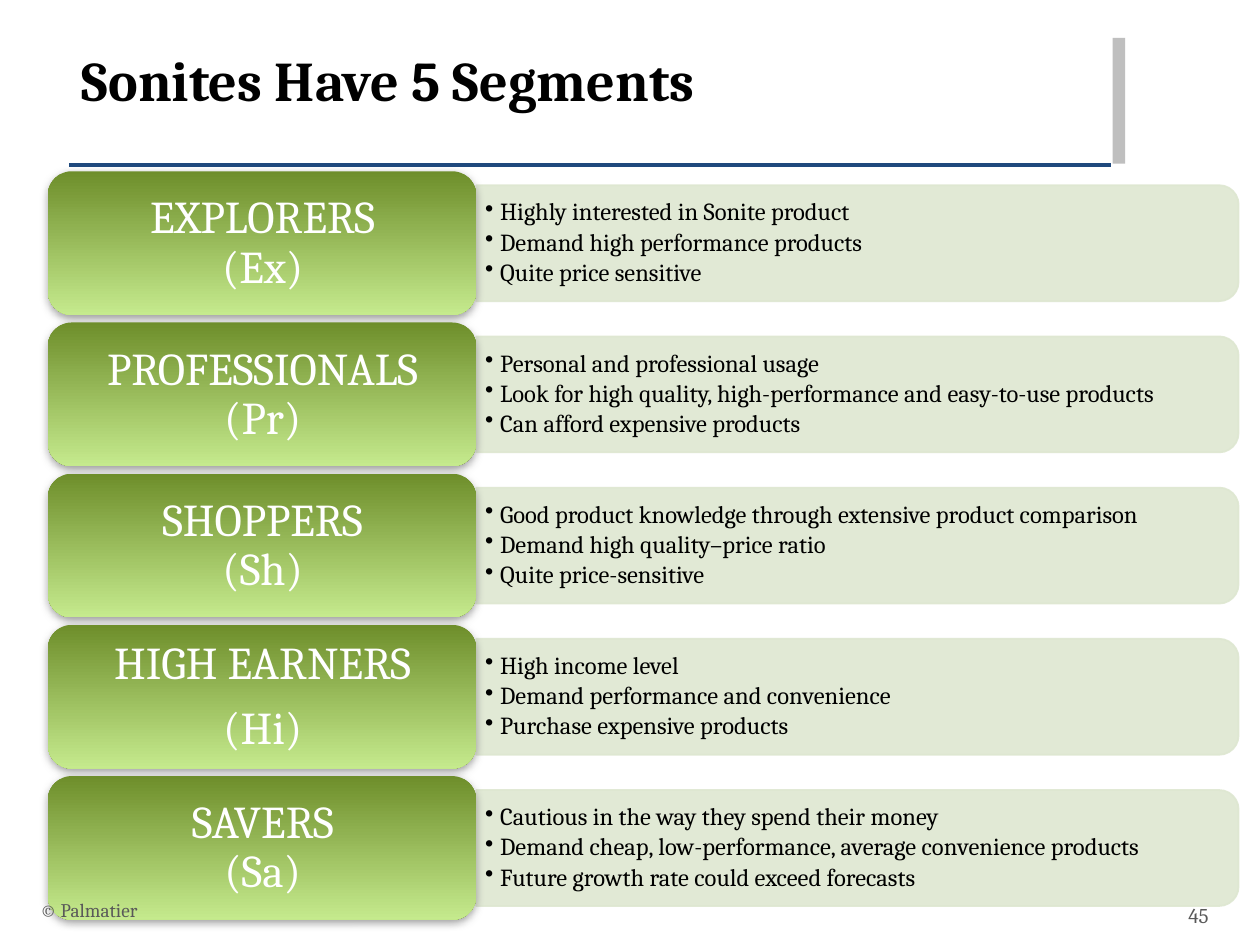
from typing import NamedTuple

from lxml.etree import SubElement
from pptx import Presentation
from pptx.dml.color import RGBColor
from pptx.enum.shapes import MSO_CONNECTOR, MSO_SHAPE
from pptx.enum.text import MSO_ANCHOR, PP_ALIGN
from pptx.oxml.ns import qn
from pptx.util import Inches, Pt

FONT = "Cambria"
BLACK = RGBColor(0x00, 0x00, 0x00)
WHITE = RGBColor(0xFF, 0xFF, 0xFF)
NAVY = RGBColor(0x1F, 0x49, 0x7D)
SILVER = RGBColor(0xBF, 0xBF, 0xBF)
GRAY = RGBColor(0x59, 0x59, 0x59)
PALE_GREEN = RGBColor(0xDE, 0xE7, 0xD1)
DARK_GREEN = RGBColor(0x6E, 0x8E, 0x2B)
LIGHT_GREEN = RGBColor(0xC5, 0xEA, 0x8D)

FIRST_TOP = 1.36
ROW_PITCH = 1.2
LABEL_LEFT, LABEL_WIDTH, LABEL_HEIGHT = 0.38, 3.4, 1.14
PANEL_LENGTH, PANEL_HEIGHT = 6.05, 0.92


class Segment(NamedTuple):
    label: list[str]
    traits: list[str]


SEGMENTS = [
    Segment(["EXPLORERS\v(Ex)"], [
        "Highly interested in Sonite product",
        "Demand high performance products",
        "Quite price sensitive"]),
    Segment(["PROFESSIONALS\v(Pr)"], [
        "Personal and professional usage",
        "Look for high quality, high-performance and easy-to-use products",
        "Can afford expensive products"]),
    Segment(["SHOPPERS\v(Sh)"], [
        "Good product knowledge through extensive product comparison",
        "Demand high quality–price ratio",
        "Quite price-sensitive"]),
    Segment(["HIGH EARNERS", "(Hi)"], [
        "High income level",
        "Demand performance and convenience",
        "Purchase expensive products"]),
    Segment(["SAVERS\v(Sa)"], [
        "Cautious in the way they spend their money",
        "Demand cheap, low-performance, average convenience products",
        "Future growth rate could exceed forecasts"]),
]


def add_text(slide, lines: list[str], left: float, top: float, width: float,
             height: float, *, size: float, color: RGBColor, bold: bool = False,
             align: PP_ALIGN = PP_ALIGN.LEFT, anchor: MSO_ANCHOR = MSO_ANCHOR.MIDDLE,
             inset: tuple[float, float] = (0.1, 0.05), line_spacing: float | None = None,
             space_after_percent: int = 0, bullet: bool = False) -> None:
    box = slide.shapes.add_textbox(Inches(left), Inches(top), Inches(width), Inches(height))
    frame = box.text_frame
    frame.word_wrap = True
    frame.vertical_anchor = anchor
    frame.margin_left = frame.margin_right = Inches(inset[0])
    frame.margin_top = frame.margin_bottom = Inches(inset[1])
    for index, line in enumerate(lines):
        paragraph = frame.add_paragraph() if index else frame.paragraphs[0]
        paragraph.text = line
        paragraph.alignment = align
        paragraph.line_spacing = line_spacing
        properties = paragraph._p.get_or_add_pPr()
        if space_after_percent:
            spacing = SubElement(properties, qn("a:spcAft"))
            SubElement(spacing, qn("a:spcPct"), val=str(space_after_percent * 1000))
        if bullet:
            paragraph.level = 1
            properties.set("marL", str(Inches(0.12)))
            properties.set("indent", str(Inches(-0.12)))
            SubElement(properties, qn("a:buChar"), char="•")
        for run in paragraph.runs:
            run.font.name = FONT
            run.font.size = Pt(size)
            run.font.bold = bold
            run.font.color.rgb = color


def add_shape(slide, kind: MSO_SHAPE, left: float, top: float, width: float, height: float):
    shape = slide.shapes.add_shape(kind, Inches(left), Inches(top), Inches(width), Inches(height))
    shape.shadow.inherit = False
    shape.line.fill.background()
    return shape


def add_panel(slide, center_y: float) -> None:
    center_x = LABEL_LEFT + LABEL_WIDTH + PANEL_LENGTH / 2
    panel = add_shape(slide, MSO_SHAPE.ROUND_2_SAME_RECTANGLE, center_x - PANEL_HEIGHT / 2,
                      center_y - PANEL_LENGTH / 2, PANEL_HEIGHT, PANEL_LENGTH)
    panel.rotation = 90
    panel.line.width = Pt(1)
    for fill in (panel.fill, panel.line.fill):
        fill.solid()
        fill.fore_color.rgb = PALE_GREEN
    for color in panel._element.spPr.iter(qn("a:srgbClr")):
        SubElement(color, qn("a:alpha"), val="90000")


def add_label(slide, top: float) -> None:
    label = add_shape(slide, MSO_SHAPE.ROUNDED_RECTANGLE, LABEL_LEFT, top,
                      LABEL_WIDTH, LABEL_HEIGHT)
    label.fill.gradient()
    label.fill.gradient_angle = 270
    for stop, color in zip(label.fill.gradient_stops, (DARK_GREEN, LIGHT_GREEN)):
        stop.color.rgb = color
    effects = label._element.spPr.find(qn("a:effectLst"))
    shadow = SubElement(effects, qn("a:outerShdw"), blurRad=str(Pt(5)), dist=str(Pt(2)),
                        dir="5400000", rotWithShape="0")
    shadow_color = SubElement(shadow, qn("a:srgbClr"), val="808080")
    SubElement(shadow_color, qn("a:alpha"), val="75000")


def add_segment(slide, segment: Segment, top: float) -> None:
    add_panel(slide, top + LABEL_HEIGHT / 2)
    add_text(slide, segment.traits, 3.79, top + 0.16, 6, 0.82, size=14, color=BLACK,
             inset=(0.06, 0.03), line_spacing=0.9, space_after_percent=15, bullet=True)
    add_label(slide, top)
    add_text(slide, segment.label, 0.44, top + 0.06, 3.29, 1.03, size=26, color=WHITE,
             align=PP_ALIGN.CENTER, inset=(0.11, 0.05), line_spacing=0.9,
             space_after_percent=35)


def add_header(slide) -> None:
    rule = slide.shapes.add_connector(MSO_CONNECTOR.STRAIGHT, Inches(0.55), Inches(1.31),
                                      Inches(8.82), Inches(1.31))
    rule.line.color.rgb = NAVY
    rule.line.width = Pt(2)
    SubElement(rule._element.spPr, qn("a:effectLst"))
    bar = add_shape(slide, MSO_SHAPE.RECTANGLE, 8.83, 0.3, 0.1, 1)
    bar.fill.solid()
    bar.fill.fore_color.rgb = SILVER
    add_text(slide, ["Sonites Have 5 Segments"], 0.55, 0.31, 8.26, 0.88, size=32,
             color=BLACK, bold=True, anchor=MSO_ANCHOR.TOP)


def main() -> None:
    presentation = Presentation()
    presentation.slide_width = Inches(10)
    presentation.slide_height = Inches(7.5)
    slide = presentation.slides.add_slide(presentation.slide_layouts[6])
    add_header(slide)
    for row, segment in enumerate(SEGMENTS):
        add_segment(slide, segment, FIRST_TOP + row * ROW_PITCH)
    add_text(slide, ["45"], 9.08, 7.06, 0.61, 0.4, size=12, color=GRAY, align=PP_ALIGN.RIGHT)
    add_text(slide, ["© Palmatier"], 0.22, 7.02, 6.7, 0.4, size=11, color=GRAY)
    presentation.save("out.pptx")


if __name__ == "__main__":
    main()
